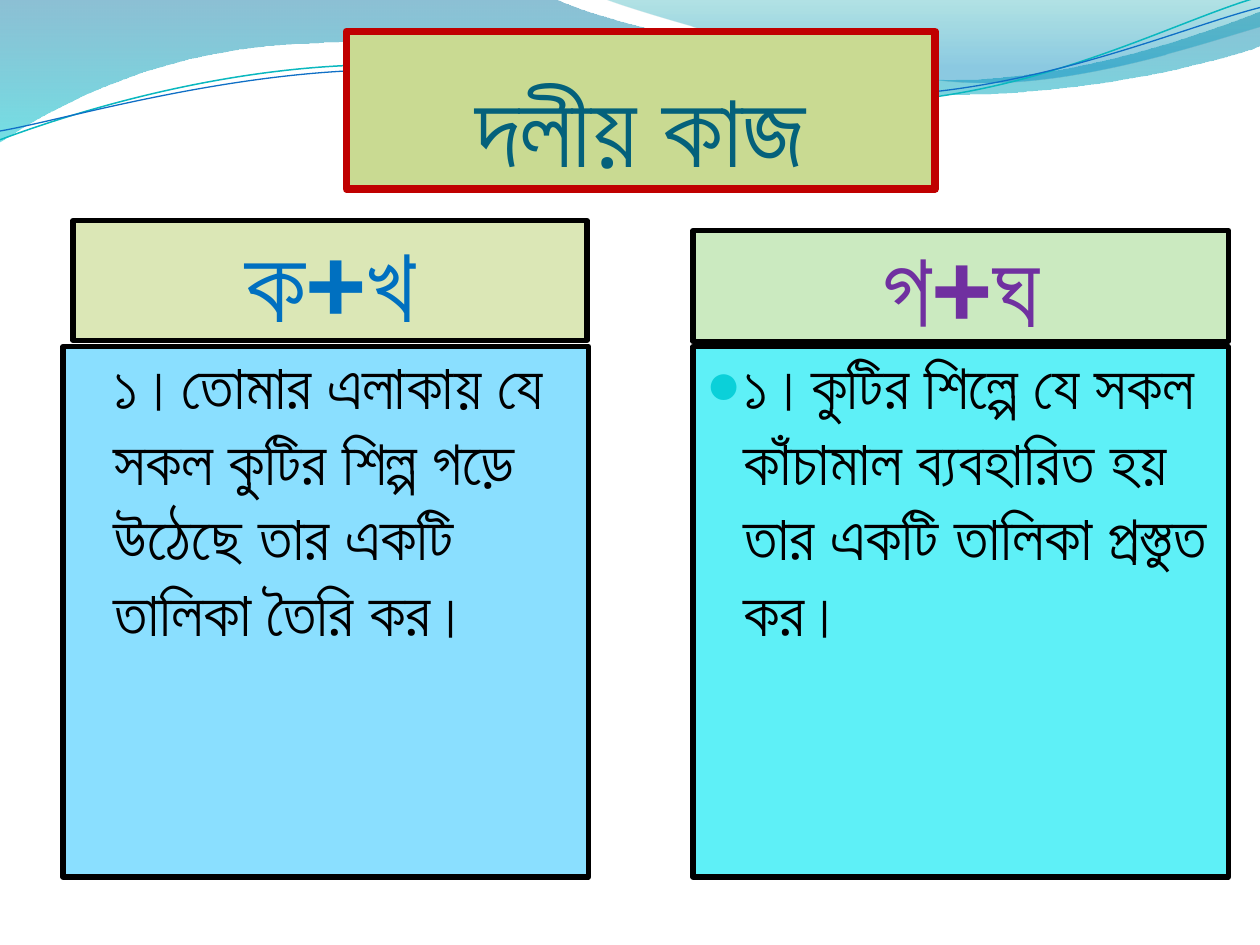
from dataclasses import dataclass
from typing import Optional

from lxml import etree
from pptx import Presentation
from pptx.dml.color import RGBColor
from pptx.enum.text import MSO_ANCHOR as Anchor, MSO_AUTO_SIZE as AutoSize, PP_ALIGN as Align
from pptx.oxml.ns import qn
from pptx.util import Inches, Pt


@dataclass(frozen=True)
class Theme:
    font: str = "Arial"
    heading_pt: int = 60
    body_pt: int = 36
    box_line_pt: float = 3
    title_line_pt: float = 4.5
    black: str = "000000"
    title_text: str = "04617B"
    title_fill: str = "C9DA92"
    title_line: str = "C00000"
    bullet: str = "0BD0D9"


@dataclass(frozen=True)
class Stop:
    pos: int
    color: str
    opacity: int


@dataclass(frozen=True)
class Wave:
    start: tuple
    segments: tuple
    stops: tuple = ()
    line: Optional[str] = None
    line_pt: float = 0


@dataclass(frozen=True)
class Box:
    idx: int
    at: tuple
    fill: str
    text: str
    color: str
    pt: int
    bold: bool = False
    line: str = Theme.black
    line_pt: float = Theme.box_line_pt
    insets: tuple = (0.05, 0, 0.05, 0)
    anchor: Anchor = Anchor.MIDDLE
    align: Align = Align.CENTER
    hanging: bool = False
    bullet: Optional[str] = None


T = Theme()
NUKTA = chr(0x09BC)
DOTTED_LETTERS = {"ড": chr(0x09DC), "য": chr(0x09DF)}
LIST = dict(color=T.black, pt=T.body_pt, insets=(0.1, 0, 0.1, 0.05),
            anchor=Anchor.TOP, align=Align.LEFT, hanging=True)

WAVES = (
    Wave((0, 0), (
        (4.4, -0.01), (4.76, 0.17, 6.64, 0.63, 7.58, 0.63),
        (8.53, 0.63, 9.58, 0.26, 10, 0.09), (10.01, 0.36),
        (9.83, 0.44, 8.7, 0.76, 7.46, 0.75), (6.22, 0.75, 3.82, 0.28, 2.57, 0.34),
        (1.29, 0.36, 0.46, 0.83, -0.01, 1.13), (0, 0)),
        stops=(Stop(0, "0074A1", 45), Stop(100, "00C6CF", 55))),
    Wave((4.79, -0.01), (
        (5.09, 0.11, 6.82, 0.62, 7.69, 0.65), (8.56, 0.69, 9.61, 0.32, 10, 0.21),
        (10, 0), (4.79, -0.01)),
        stops=(Stop(0, "00A1A9", 30), Stop(80, "008BBF", 45))),
    Wave((0, 1.11), (
        (0.48, 0.93, 1.58, 0.57, 2.77, 0.52), (3.95, 0.47, 5.93, 0.89, 7.13, 0.8),
        (8.33, 0.71, 9.38, 0.15, 9.98, -0.02)), line="0AB8BF", line_pt=0.85),
    Wave((0, 1.04), (
        (0.47, 0.96, 1.64, 0.61, 2.83, 0.56), (4.03, 0.51, 5.97, 0.84, 7.17, 0.75),
        (8.36, 0.67, 9.41, 0.21, 10, 0.06)), line="0F6FC6", line_pt=0.75),
)

BOXES = (
    Box(0, (2.75, 0.25, 4.67, 1.25), T.title_fill, "দলীয় কাজ", T.title_text, T.heading_pt,
        line=T.title_line, line_pt=T.title_line_pt, insets=(0, 0.05, 0, 0), anchor=Anchor.BOTTOM),
    Box(1, (0.58, 1.75, 4.08, 0.95), "DBE7B6", "ক+খ", "0070C0", T.heading_pt, bold=True),
    Box(3, (5.5, 1.83, 4.25, 0.88), "CBEAC0", "গ+ঘ", "7030A0", T.heading_pt, bold=True),
    Box(2, (0.5, 2.75, 4.17, 4.21), "8ADFFF",
        "\t১।তোমার এলাকায় যে সকল কুটির শিল্প গড়ে উঠেছে তার একটি তালিকা তৈরি কর।", **LIST),
    Box(4, (5.5, 2.75, 4.25, 4.21), "5EF0F7",
        "১।কুটির শিল্পে যে সকল কাঁচামাল ব্যবহারিত হয় তার একটি তালিকা প্রস্তুত কর।",
        bullet="●", **LIST),
)


def rgb(color: str) -> RGBColor:
    return RGBColor.from_string(color)


def add_xml(parent, tag: str, **attrs):
    return etree.SubElement(parent, qn(tag), {k: str(v) for k, v in attrs.items()})


def compose(text: str) -> str:
    for base, dotted in DOTTED_LETTERS.items():
        text = text.replace(base + NUKTA, dotted)
    return text


def bend(s, segments: tuple) -> None:
    path = s.element.spPr.find(f".//{qn('a:path')}")
    for node, seg in zip(path.findall(qn("a:lnTo")), segments):
        if len(seg) == 2:
            continue
        curve = add_xml(path, "a:cubicBezTo")
        for x, y in zip(seg[::2], seg[1::2]):
            add_xml(curve, "a:pt", x=Inches(x) - s.left, y=Inches(y) - s.top)
        path.replace(node, curve)


def set_gradient(s, stops: tuple) -> None:
    s.fill.gradient()
    grad = s.element.spPr.find(qn("a:gradFill"))
    for child in list(grad):
        grad.remove(child)
    gs_list = add_xml(grad, "a:gsLst")
    for stop in stops:
        gs = add_xml(gs_list, "a:gs", pos=stop.pos * 1000)
        clr = add_xml(gs, "a:srgbClr", val=stop.color)
        add_xml(clr, "a:alpha", val=stop.opacity * 1000)
    add_xml(grad, "a:lin", ang=90 * 60000, scaled=0)


def draw_wave(slide, wave: Wave) -> None:
    builder = slide.shapes.build_freeform(*map(Inches, wave.start))
    ends = [tuple(map(Inches, seg[-2:])) for seg in wave.segments]
    builder.add_line_segments(ends, close=bool(wave.stops))
    s = builder.convert_to_shape()
    bend(s, wave.segments)
    s.shadow.inherit = False
    if wave.stops:
        set_gradient(s, wave.stops)
        s.line.fill.background()
    else:
        s.fill.background()
        s.line.color.rgb = rgb(wave.line)
        s.line.width = Pt(wave.line_pt)
    slide.shapes.title.element.addprevious(s.element)


def write(tf, text: str, *, color: str, pt: int, bold: bool, align: Align,
          hanging: bool, bullet: Optional[str]) -> None:
    p = tf.paragraphs[0]
    pPr = p._p.get_or_add_pPr()
    indent = Inches(0.3) if hanging else 0
    pPr.set("marL", str(indent))
    pPr.set("indent", str(-indent))
    if bullet:
        add_xml(add_xml(pPr, "a:buClr"), "a:srgbClr", val=T.bullet)
        add_xml(pPr, "a:buSzPct", val=95000)
        add_xml(pPr, "a:buChar", char=bullet)
    else:
        add_xml(pPr, "a:buNone")
    p.alignment = align
    p.space_before = Pt(0)
    r = p.add_run()
    r.text = compose(text)
    r.font.name = T.font
    r.font.size = Pt(pt)
    r.font.bold = bold
    r.font.color.rgb = rgb(color)


def fill_box(slide, box: Box) -> None:
    sp = next(s for s in slide.placeholders if s.placeholder_format.idx == box.idx)
    sp.left, sp.top, sp.width, sp.height = map(Inches, box.at)
    sp.fill.solid()
    sp.fill.fore_color.rgb = rgb(box.fill)
    sp.line.color.rgb = rgb(box.line)
    sp.line.width = Pt(box.line_pt)
    tf = sp.text_frame
    tf.word_wrap = True
    tf.auto_size = AutoSize.NONE
    tf.vertical_anchor = box.anchor
    tf.margin_left, tf.margin_top, tf.margin_right, tf.margin_bottom = map(Inches, box.insets)
    write(tf, box.text, color=box.color, pt=box.pt, bold=box.bold, align=box.align,
          hanging=box.hanging, bullet=box.bullet)


def main() -> None:
    prs = Presentation()
    prs.slide_width, prs.slide_height = Inches(10), Inches(7.5)
    comparison = prs.slide_layouts.get_by_name("Comparison")
    slide = prs.slides.add_slide(comparison)
    for wave in WAVES:
        draw_wave(slide, wave)
    for box in BOXES:
        fill_box(slide, box)
    prs.save("out.pptx")


if __name__ == "__main__":
    main()
